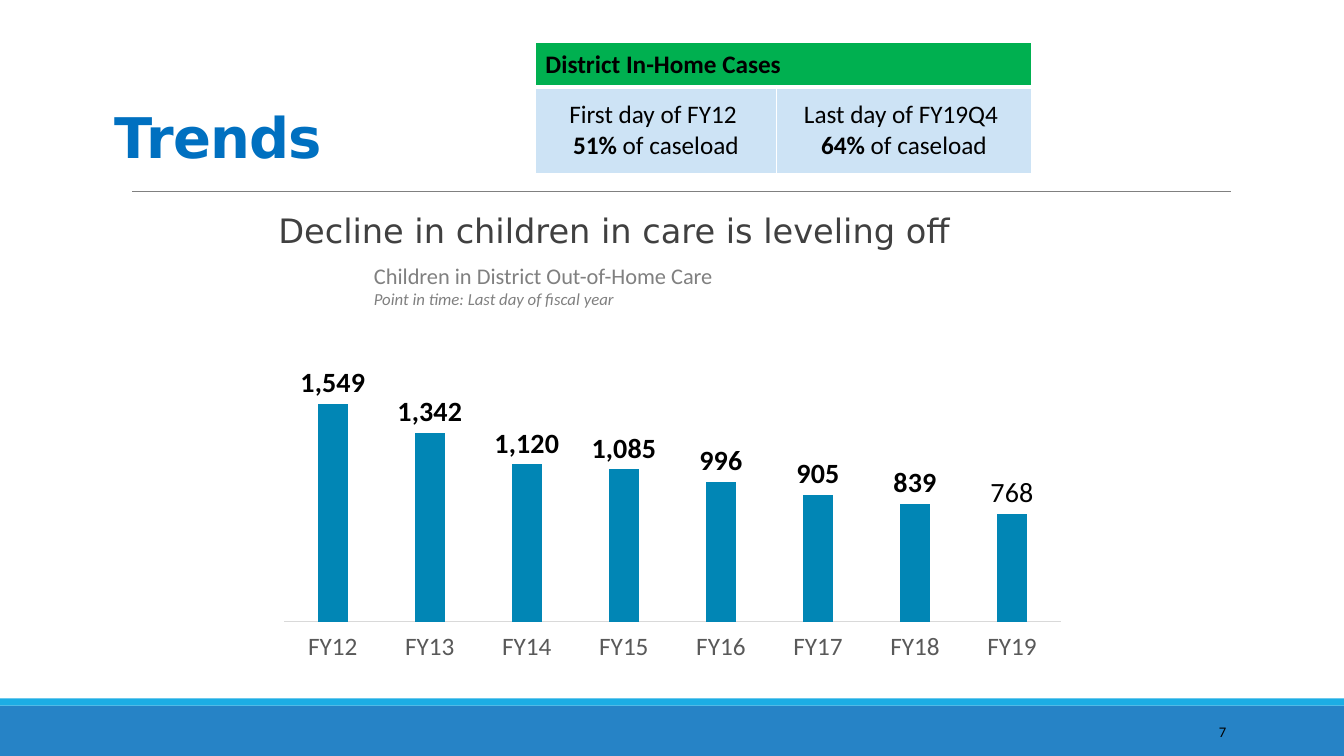
from lxml.etree import SubElement
from pptx import Presentation
from pptx.chart.data import CategoryChartData
from pptx.dml.color import RGBColor
from pptx.enum.chart import XL_CHART_TYPE, XL_LABEL_POSITION, XL_TICK_LABEL_POSITION, XL_TICK_MARK
from pptx.enum.shapes import MSO_CONNECTOR, MSO_SHAPE
from pptx.enum.text import MSO_ANCHOR, MSO_AUTO_SIZE, PP_ALIGN
from pptx.oxml import parse_xml
from pptx.oxml.ns import nsdecls, qn
from pptx.util import Inches, Pt

HUES = {
    "band": "2683C6", "strip": "1CADE4", "rule": "808080", "title": "0070C0",
    "body": "404040", "note": "808080", "black": "000000", "white": "FFFFFF",
    "head": "00B050", "cell": "CDE3F5", "bar": "0186B5", "axis": "D9D9D9",
    "tick": "595959",
}
SANS = "DejaVu Sans"
MAIN = "Calibri"


class Deck:
    def __init__(self):
        self.file = Presentation()
        self.file.slide_width = Inches(13.33)
        self.file.slide_height = Inches(7.5)
        self.slide = self.file.slides.add_slide(self.file.slide_layouts[1])
        self.shapes = self.slide.shapes

    def hue(self, name):
        return RGBColor.from_string(HUES[name])

    def box(self, place):
        return [Inches(side) for side in place]

    def style(self, font, size, hue, face=MAIN, bold=False, slant=False):
        font.size = Pt(size)
        font.name = face
        font.bold = bold
        font.italic = slant
        font.color.rgb = self.hue(hue)

    def bar(self, place, hue):
        shape = self.shapes.add_shape(MSO_SHAPE.RECTANGLE, *self.box(place))
        shape.shadow.inherit = False
        shape.fill.solid()
        shape.fill.fore_color.rgb = self.hue(hue)
        shape.line.fill.background()

    def rule(self, ends):
        line = self.shapes.add_connector(MSO_CONNECTOR.STRAIGHT, *self.box(ends))
        line.line.color.rgb = self.hue("rule")
        line.line.width = Pt(0.5)
        SubElement(line.element.spPr, qn("a:effectLst"))

    def holder(self, index, place, text):
        shape = self.slide.placeholders[index]
        shape.left, shape.top, shape.width, shape.height = self.box(place)
        frame = shape.text_frame
        frame.text = text
        frame.word_wrap = True
        frame.auto_size = MSO_AUTO_SIZE.NONE
        para = frame.paragraphs[0]
        para.alignment = PP_ALIGN.LEFT
        para.space_before = Pt(0)
        return frame, para

    def title(self, place, text):
        frame, para = self.holder(0, place, text)
        frame.vertical_anchor = MSO_ANCHOR.BOTTOM
        para.line_spacing = 0.85
        run = para.runs[0]
        self.style(run.font, 40, "title", SANS, bold=True)
        run.font._element.set("spc", "-50")

    def body(self, place, text):
        frame, para = self.holder(1, place, text)
        frame.margin_left = frame.margin_right = 0
        para.line_spacing = 0.9
        para.space_after = Pt(2)
        props = para._p.get_or_add_pPr()
        props.set("marL", str(Inches(0.1)))
        props.set("indent", str(-Inches(0.1)))
        SubElement(props, qn("a:buChar")).set("char", " ")
        self.style(para.runs[0].font, 24, "body", SANS)

    def text(self, place, lines, hue, align=PP_ALIGN.LEFT, anchor=MSO_ANCHOR.TOP):
        frame = self.shapes.add_textbox(*self.box(place)).text_frame
        frame.word_wrap = True
        frame.vertical_anchor = anchor
        frame.text = "\n".join(words for words, size, slant in lines)
        for para, (words, size, slant) in zip(frame.paragraphs, lines):
            para.alignment = align
            self.style(para.runs[0].font, size, hue, slant=slant)

    def cell(self, cell, hue, lines, align, base=1):
        cell.vertical_anchor = MSO_ANCHOR.MIDDLE
        frame = cell.text_frame
        for index, runs in enumerate(lines):
            para = frame.add_paragraph() if index else frame.paragraphs[0]
            para.alignment = align
            for words, bold in runs:
                run = para.add_run()
                run.text = words
                self.style(run.font, 18, "black", bold=bold)
        props = cell._tc.get_or_add_tcPr()
        for side, width in (("L", 1), ("R", 1), ("T", base if hue == "cell" else 1),
                            ("B", base if hue == "head" else 1)):
            edge = SubElement(props, qn("a:ln" + side), w=str(Pt(width)))
            fill = SubElement(edge, qn("a:solidFill"))
            SubElement(fill, qn("a:srgbClr"), val=HUES["white"])
        cell.fill.solid()
        cell.fill.fore_color.rgb = self.hue(hue)

    def table(self, place, widths, heights, head, cells):
        table = self.shapes.add_table(2, len(widths), *self.box(place)).table
        table.horz_banding = False
        for col, width in zip(table.columns, widths):
            col.width = Inches(width)
        for row, height in zip(table.rows, heights):
            row.height = Inches(height)
        table.cell(0, 0).merge(table.cell(0, len(widths) - 1))
        self.cell(table.cell(0, 0), "head", [[(head, True)]], PP_ALIGN.LEFT, 3)
        for index, (day, share) in enumerate(cells):
            lines = [[(day, False)], [(share, True), (" of caseload", False)]]
            self.cell(table.cell(1, index), "cell", lines, PP_ALIGN.CENTER, 3)

    def chart(self, place, years, counts):
        data = CategoryChartData(number_format="#,##0")
        data.categories = years
        data.add_series("Series 1", counts)
        kind = XL_CHART_TYPE.COLUMN_CLUSTERED
        chart = self.shapes.add_chart(kind, *self.box(place), data).chart
        chart.has_legend = False
        chart.has_title = False
        self.style(chart.font, 10, "black")
        plot = chart.plots[0]
        plot.vary_by_categories = False
        plot.gap_width = 219
        plot.overlap = -27
        bars = plot.series[0]
        bars.format.fill.solid()
        bars.format.fill.fore_color.rgb = self.hue("bar")
        labels = bars.data_labels
        labels.show_value = True
        labels.number_format = "#,##0"
        labels.number_format_is_linked = False
        labels.position = XL_LABEL_POSITION.OUTSIDE_END
        self.style(labels.font, 20, "black", bold=True)
        last = bars.points[len(counts) - 1].data_label
        self.style(last.font, 20, "black")
        last.position = XL_LABEL_POSITION.OUTSIDE_END
        axis = chart.category_axis
        axis.major_tick_mark = XL_TICK_MARK.NONE
        axis.tick_label_position = XL_TICK_LABEL_POSITION.LOW
        axis.format.line.color.rgb = self.hue("axis")
        axis.format.line.width = Pt(0.75)
        self.style(axis.tick_labels.font, 18, "tick")
        scale = chart.value_axis
        scale.visible = False
        scale.has_major_gridlines = False
        scale.minimum_scale = 0
        scale.maximum_scale = 1800
        area = chart._chartSpace.chart.plotArea
        for old in area.findall(qn("c:layout")):
            area.remove(old)
        sizes = {"x": 0.02, "y": 0.02, "w": 0.96, "h": 0.85}
        parts = "".join(f'<c:{key} val="{size}"/>' for key, size in sizes.items())
        area.insert(0, parse_xml(
            f'<c:layout {nsdecls("c")}><c:manualLayout><c:layoutTarget val="inner"/>'
            f'<c:xMode val="edge"/><c:yMode val="edge"/>{parts}'
            '</c:manualLayout></c:layout>'))


def main():
    deck = Deck()
    deck.bar((0, 7, 13.33, 0.5), "band")
    deck.bar((0, 6.93, 13.33, 0.07), "strip")
    deck.rule((1.31, 1.9, 12.21, 1.9))
    deck.title((1.04, 0.97, 8.93, 0.77), "Trends")
    deck.body((2.66, 2.08, 8.5, 4.58), "Decline in children in care is leveling off")
    deck.text((10.83, 7.06, 1.43, 0.4), [("7", 10.5, False)], "black",
              PP_ALIGN.RIGHT, MSO_ANCHOR.MIDDLE)
    deck.text((3.61, 2.55, 4.75, 0.57),
              [("Children in District Out-of-Home Care", 16, False),
               ("Point in time: Last day of fiscal year", 12, True)], "note")
    deck.table((5.31, 0.42, 4.92, 1.3), (2.39, 2.53), (0.44, 0.86),
               "District In-Home Cases",
               [("First day of FY12 ", "51%"), ("Last day of FY19Q4 ", "64%")])
    deck.chart((2.66, 3.6, 8.02, 2.97), [f"FY{year}" for year in range(12, 20)],
               (1549, 1342, 1120, 1085, 996, 905, 839, 768))
    deck.file.save("out.pptx")


if __name__ == "__main__":
    main()
